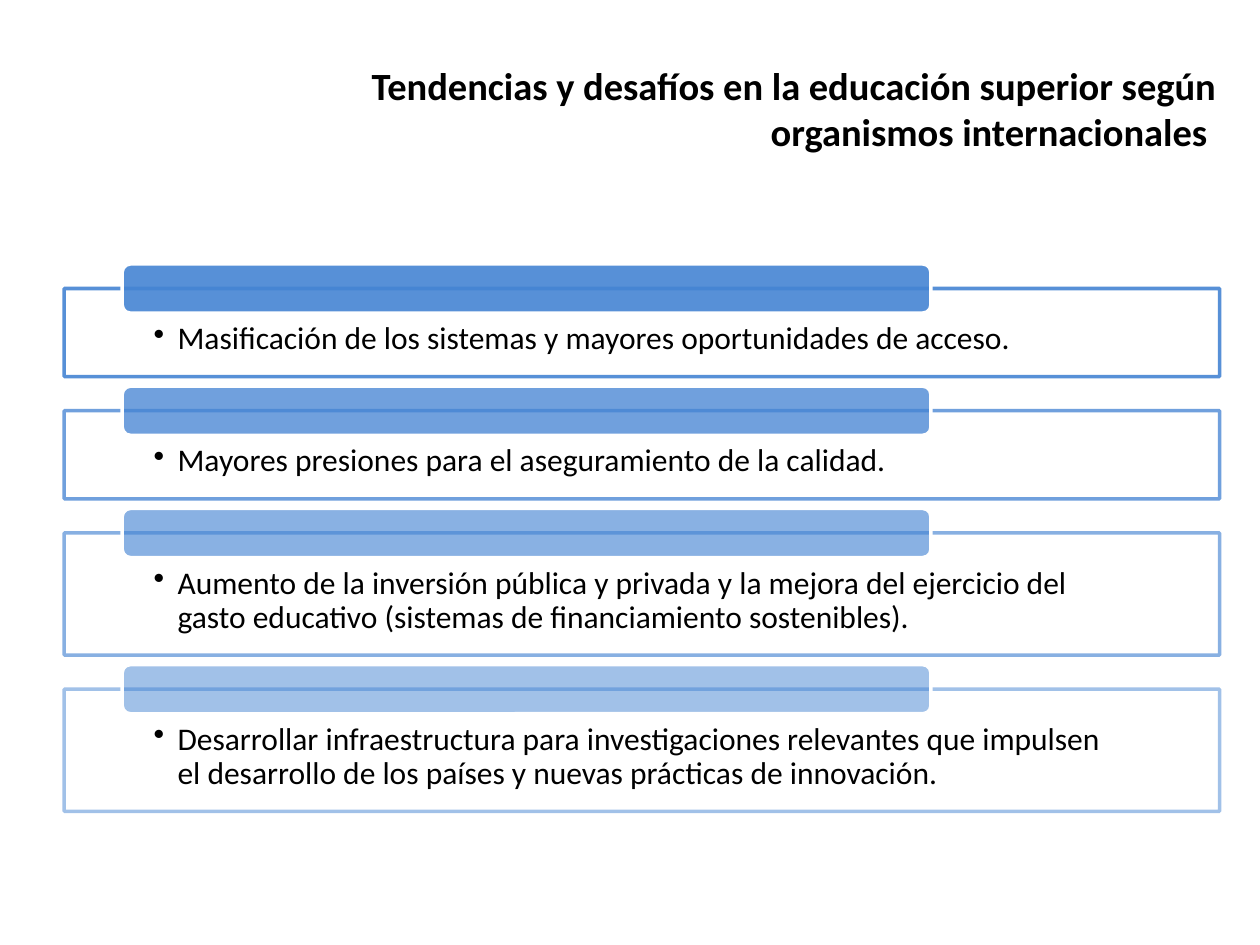
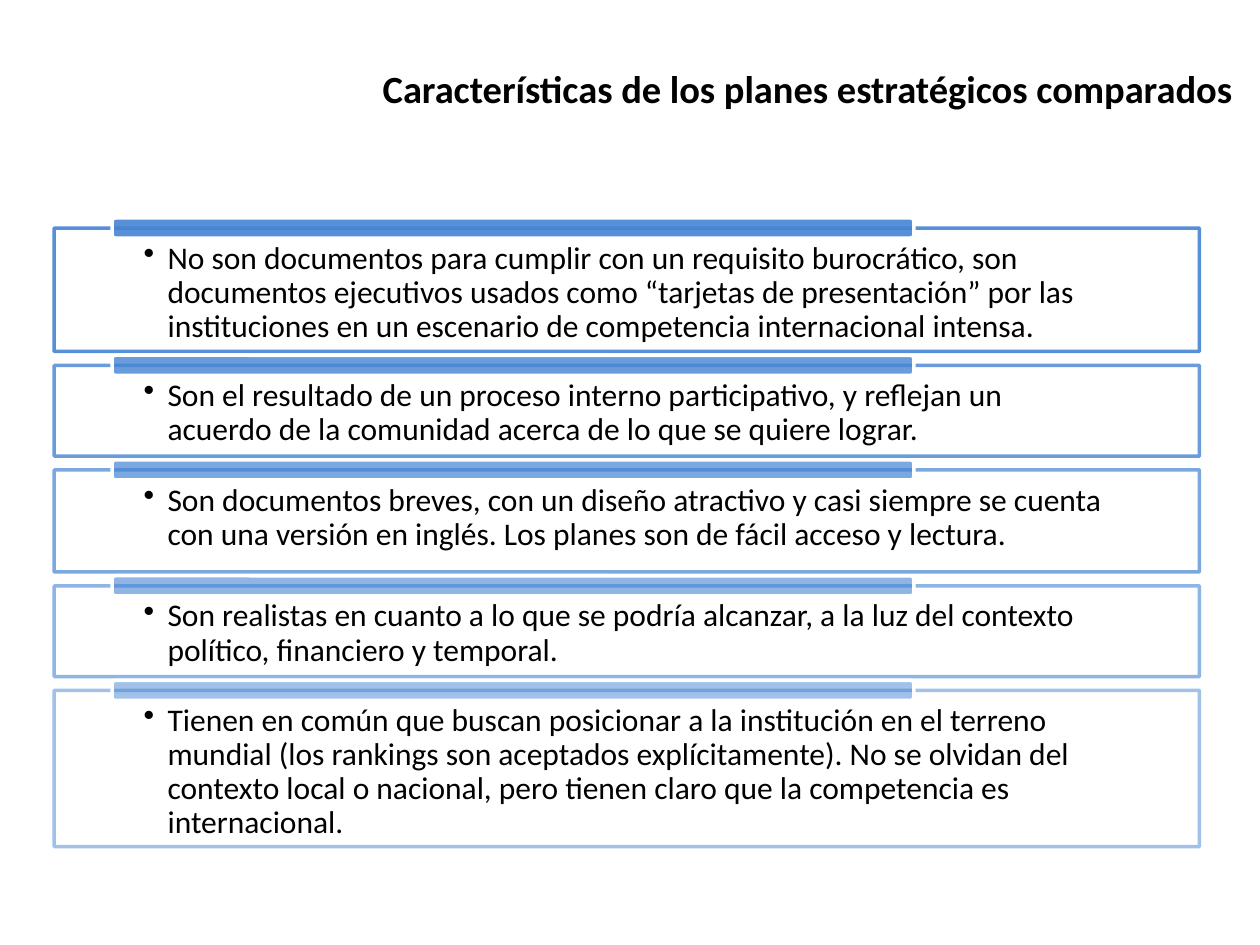
from lxml import etree
from pptx import Presentation, util as u
from pptx.dml.color import RGBColor
from pptx.enum import shapes, text
from pptx.oxml.ns import qn

FONT = "Calibri"
BLUE, WHITE, BLACK = "4584D3", "FFFFFF", "000000"
STRONGEST, FAINTEST = 90, 50  # opacity of the first and last panel, percent
TAB_INDENT, TAB_SHARE = 0.46, 0.7
BULLET_INDENT = 0.19

TRENDS = [
    (0.7, "Masificación de los sistemas y mayores oportunidades de acceso."),
    (0.7, "Mayores presiones para el aseguramiento de la calidad."),
    (0.97, "Aumento de la inversión pública y privada y la mejora del ejercicio del "
           "gasto educativo (sistemas de financiamiento sostenibles)."),
    (0.97, "Desarrollar infraestructura para investigaciones relevantes que impulsen "
           "el desarrollo de los países y nuevas prácticas de innovación."),
]
PLAN_FEATURES = [
    (0.98, "No son documentos para cumplir con un requisito burocrático, son "
           "documentos ejecutivos usados como “tarjetas de presentación” por las "
           "instituciones en un escenario de competencia internacional intensa."),
    (0.72, "Son el resultado de un proceso interno participativo, y reflejan un "
           "acuerdo de la comunidad acerca de lo que se quiere lograr."),
    (0.81, "Son documentos breves, con un diseño atractivo y casi siempre se cuenta "
           "con una versión en inglés. Los planes son de fácil acceso y lectura."),
    (0.72, "Son realistas en cuanto a lo que se podría alcanzar, a la luz del contexto "
           "político, financiero y temporal."),
    (1.24, "Tienen en común que buscan posicionar a la institución en el terreno "
           "mundial (los rankings son aceptados explícitamente). No se olvidan del "
           "contexto local o nacional, pero tienen claro que la competencia es "
           "internacional."),
]


def color(hex_string):
    return RGBColor.from_string(hex_string)


def inches(*lengths):
    return [u.Inches(length) for length in lengths]


def set_font(para, size, bold=False):
    para.font.name = FONT
    para.font.size = u.Pt(size)
    para.font.bold = bold
    para.font.color.rgb = color(BLACK)


def set_opacity(shape, place, percent):
    """Make the solid fill found under place (relative to spPr) see-through."""
    tag = "/".join(qn(name) for name in place + ["a:solidFill", "a:srgbClr"])
    etree.SubElement(shape.element.spPr.find(tag), qn("a:alpha"), val=str(round(percent * 1000)))


def add_block(page, kind, area, fill, fill_opacity, line, line_opacity):
    block = page.shapes.add_shape(kind, *inches(*area))
    block.shadow.inherit = False
    block.fill.solid()
    block.fill.fore_color.rgb = color(fill)
    block.line.color.rgb = color(line)
    block.line.width = u.Pt(2)
    set_opacity(block, [], fill_opacity)
    set_opacity(block, ["a:ln"], line_opacity)
    return block


def add_title(page, area, words):
    box = page.shapes.add_textbox(*inches(*area))
    box.text_frame.word_wrap = True
    para = box.text_frame.paragraphs[0]
    para.text = words
    para.alignment = text.PP_ALIGN.RIGHT
    set_font(para, 22, bold=True)


def write_bullet(panel, words, inset_top):
    frame = panel.text_frame
    frame.word_wrap = True
    frame.vertical_anchor = text.MSO_ANCHOR.TOP
    frame.margin_left, frame.margin_top, frame.margin_right, frame.margin_bottom = inches(
        0.71, inset_top, 0.71, 0.14)
    para = frame.paragraphs[0]
    para.text = words
    para.alignment = text.PP_ALIGN.LEFT
    para.line_spacing = 0.9
    properties = para._p.get_or_add_pPr()
    properties.set("marL", str(u.Inches(BULLET_INDENT)))
    properties.set("indent", str(-u.Inches(BULLET_INDENT)))
    etree.SubElement(properties, qn("a:buChar"), char="•")
    set_font(para, 18)


def add_panel_list(page, left, top, width, gap, tab_height, inset_top, items):
    """Stack bordered panels, each with a tab centred on its top edge, fading downwards."""
    fade = (STRONGEST - FAINTEST) / (len(items) - 1)
    for index, (height, words) in enumerate(items):
        opacity = STRONGEST - index * fade
        panel = add_block(page, shapes.MSO_SHAPE.RECTANGLE, (left, top, width, height),
                          WHITE, 90, BLUE, opacity)
        write_bullet(panel, words, inset_top)
        tab = (left + TAB_INDENT, top - tab_height / 2, width * TAB_SHARE, tab_height)
        add_block(page, shapes.MSO_SHAPE.ROUNDED_RECTANGLE, tab, BLUE, opacity, WHITE, 100)
        top += height + gap


def main():
    deck = Presentation()
    deck.slide_width, deck.slide_height = inches(10, 7.5)
    blank = deck.slide_layouts[6]

    page = deck.slides.add_slide(blank)
    add_panel_list(page, 0.51, 2.29, 9.17, 0.27, 0.39, 0.27, TRENDS)
    add_title(page, (1.56, 0.44, 8.19, 0.84),
              "Tendencias y desafíos en la educación superior según "
              "organismos internacionales ")

    page = deck.slides.add_slide(blank)
    add_title(page, (2.01, 0.47, 7.87, 0.47),
              "Características de los planes estratégicos comparados")
    add_panel_list(page, 0.43, 1.81, 9.09, 0.11, 0.16, 0.11, PLAN_FEATURES)

    deck.save("out.pptx")


if __name__ == "__main__":
    main()
